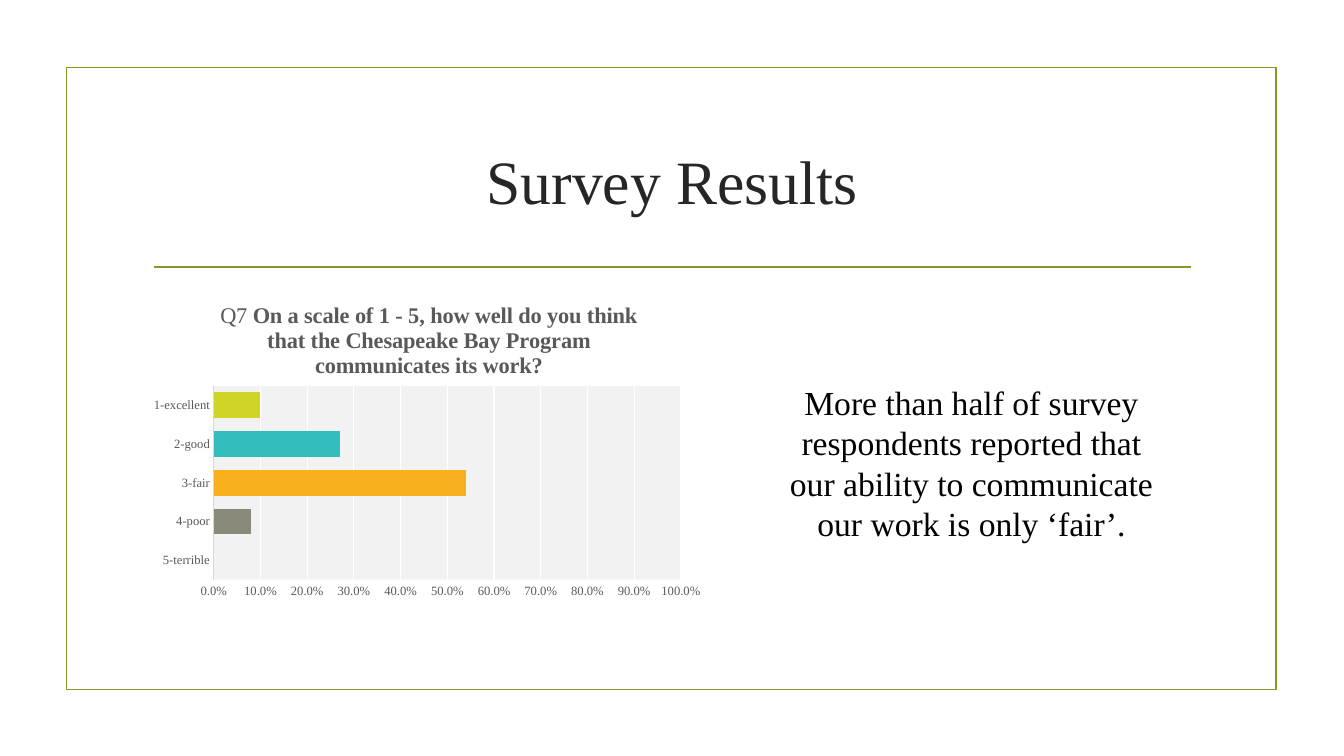
import pptx
import pptx.util
import pptx.chart.data
import pptx.dml.color
import pptx.enum.chart
import pptx.enum.shapes
import pptx.enum.text
import pptx.oxml
import pptx.oxml.ns
from pptx.util import Inches

FONT = "Times New Roman"
GREEN, GRAY = "83992A", "595959"
qn = pptx.oxml.ns.qn


def color(value):
    return pptx.dml.color.RGBColor.from_string(value)


def set_font(font, size, col, bold=False):
    font.name, font.size, font.bold = FONT, pptx.util.Pt(size), bold
    font.color.rgb = color(col)


def add_text(p, text, size=24, col="000000", bold=False, align="CENTER"):
    p.alignment = getattr(pptx.enum.text.PP_ALIGN, align)
    r = p.add_run()
    r.text = text
    set_font(r.font, size, col, bold)
    return r


def set_line(line, col, width):
    line.color.rgb = color(col)
    line.width = pptx.util.Pt(width)


def set_layout(parent, inner=False, **fractions):
    """Place a chart part by fractions of the chart area."""
    old = parent.find(qn("c:layout"))
    if old is not None:
        parent.remove(old)
    layout = pptx.oxml.parse_xml(f'<c:layout {pptx.oxml.ns.nsdecls("c")}><c:manualLayout/></c:layout>')
    settings = {"layoutTarget": "inner"} if inner else {}
    settings.update(xMode="edge", yMode="edge", **fractions)
    for tag, value in settings.items():
        layout[0].makeelement(qn("c:" + tag))
        child = pptx.oxml.parse_xml(f'<c:{tag} {pptx.oxml.ns.nsdecls("c")} val="{value}"/>')
        layout[0].append(child)
    parent.insert(0 if parent.find(qn("c:tx")) is None else 1, layout)


class Deck:
    def __init__(self):
        self.prs = pptx.Presentation()
        self.prs.slide_width, self.prs.slide_height = Inches(13.33), Inches(7.5)
        self.s = self.prs.slides.add_slide(self.prs.slide_layouts[5])

    def frame(self, *box):
        sp = self.s.shapes.add_shape(
            pptx.enum.shapes.MSO_SHAPE.RECTANGLE, *map(Inches, box))
        sp.shadow.inherit = False
        sp.fill.background()
        set_line(sp.line, GREEN, 1.25)

    def rule(self, *ends):
        cx = self.s.shapes.add_connector(
            pptx.enum.shapes.MSO_CONNECTOR.STRAIGHT, *map(Inches, ends))
        set_line(cx.line, GREEN, 1.25)
        cx._element.spPr.append(pptx.oxml.parse_xml(
            f'<a:effectLst {pptx.oxml.ns.nsdecls("a")}/>'))

    def title(self, text, *box):
        sp = self.s.shapes.title
        sp.left, sp.top, sp.width, sp.height = map(Inches, box)
        sp.text_frame.vertical_anchor = pptx.enum.text.MSO_ANCHOR.MIDDLE
        add_text(sp.text_frame.paragraphs[0], text, size=44, col="262626")

    def text(self, text, *box):
        tf = self.s.shapes.add_textbox(*map(Inches, box)).text_frame
        tf.word_wrap = True
        tf.auto_size = pptx.enum.text.MSO_AUTO_SIZE.SHAPE_TO_FIT_TEXT
        add_text(tf.paragraphs[0], text)

    def bar_chart(self, title_lines, answers, *box):
        data = pptx.chart.data.CategoryChartData(number_format="0.0%")
        data.categories = [name for name, _, _ in answers]
        data.add_series("Series 1", [value for _, value, _ in answers])
        chart = self.s.shapes.add_chart(
            pptx.enum.chart.XL_CHART_TYPE.BAR_CLUSTERED, *map(Inches, box), data).chart
        set_font(chart.font, 10, "000000")
        chart.has_legend = False

        # Chart title: question number in regular weight, question in bold
        tf = chart.chart_title.text_frame
        for i, line in enumerate(title_lines):
            p = tf.add_paragraph() if i else tf.paragraphs[0]
            if i == 0:
                add_text(p, "Q7 ", size=16, col=GRAY)
            add_text(p, line, size=16, col=GRAY, bold=True)
        set_layout(chart.chart_title._element, x=0.13, y=0.05)

        # Bars
        plot = chart.plots[0]
        plot.gap_width, plot.vary_by_categories = 50, False
        series = plot.series[0]
        series.format.fill.solid()
        series.format.fill.fore_color.rgb = color(GREEN)
        for i, (_, value, col) in enumerate(answers):
            if value is not None:
                fill = series.points[i].format.fill
                fill.solid()
                fill.fore_color.rgb = color(col)

        # Axes
        none = pptx.enum.chart.XL_TICK_MARK.NONE
        for axis in (chart.category_axis, chart.value_axis):
            axis.major_tick_mark = axis.minor_tick_mark = none
            set_font(axis.tick_labels.font, 9, GRAY)
        set_line(chart.category_axis.format.line, "D9D9D9", 0.75)
        axis = chart.value_axis
        axis.minimum_scale, axis.maximum_scale, axis.major_unit = 0, 1, 0.1
        axis.tick_labels.number_format = "0.0%"
        axis.tick_labels.number_format_is_linked = False
        axis.format.line.fill.background()
        axis.has_major_gridlines = True
        set_line(axis.major_gridlines.format.line, "FFFFFF", 0.75)

        # Plot area
        area = chart._chartSpace.chart.plotArea
        set_layout(area, inner=True, x=0.124, y=0.322, w=0.82, h=0.6)
        area.append(pptx.oxml.parse_xml(
            f'<c:spPr {pptx.oxml.ns.nsdecls("c", "a")}><a:solidFill>'
            '<a:srgbClr val="F2F2F2"/></a:solidFill><a:ln><a:noFill/></a:ln></c:spPr>'))


def main():
    deck = Deck()

    # Frame and heading
    deck.frame(0.66, 0.67, 12, 6.17)
    deck.rule(1.53, 2.65, 11.81, 2.65)
    deck.title("Survey Results", 1.42, 1.07, 10.5, 1.43)

    # Survey chart
    answers = [
        ("5-terrible", None, None),
        ("4-poor", 0.08, "898A7A"),
        ("3-fair", 0.54, "F7AF1C"),
        ("2-good", 0.27, "33BDBF"),
        ("1-excellent", 0.1, "CFD427"),
    ]
    question = ["On a scale of 1 - 5, how well do you think",
                "that the Chesapeake Bay Program", "communicates its work?"]
    deck.bar_chart(question, answers, 1.42, 2.8, 5.65, 3.2)

    # Finding
    deck.text("More than half of survey respondents reported that our ability to "
              "communicate our work is only ‘fair’.", 7.67, 3.74, 3.93, 1.72)

    deck.prs.save("out.pptx")


if __name__ == "__main__":
    main()
